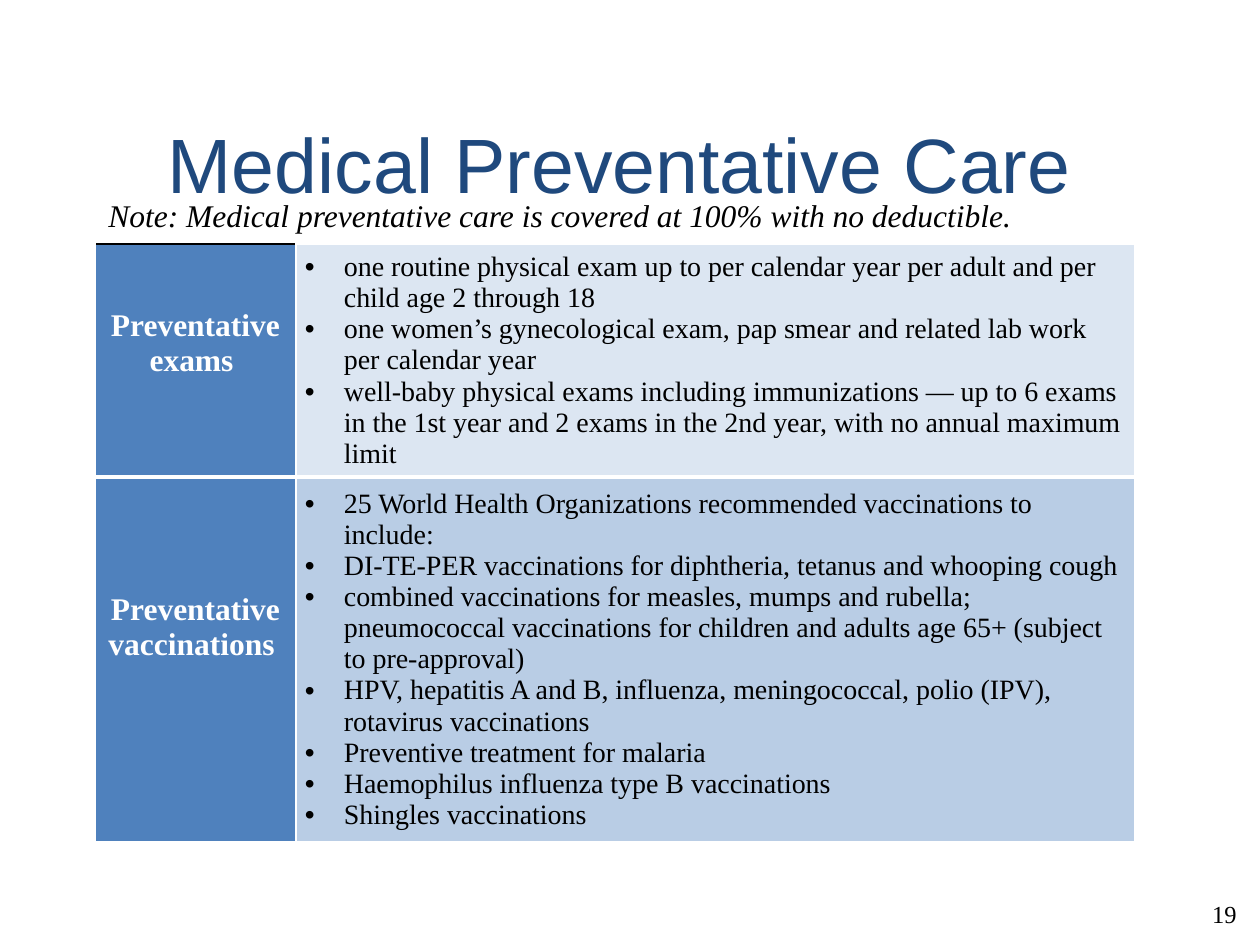
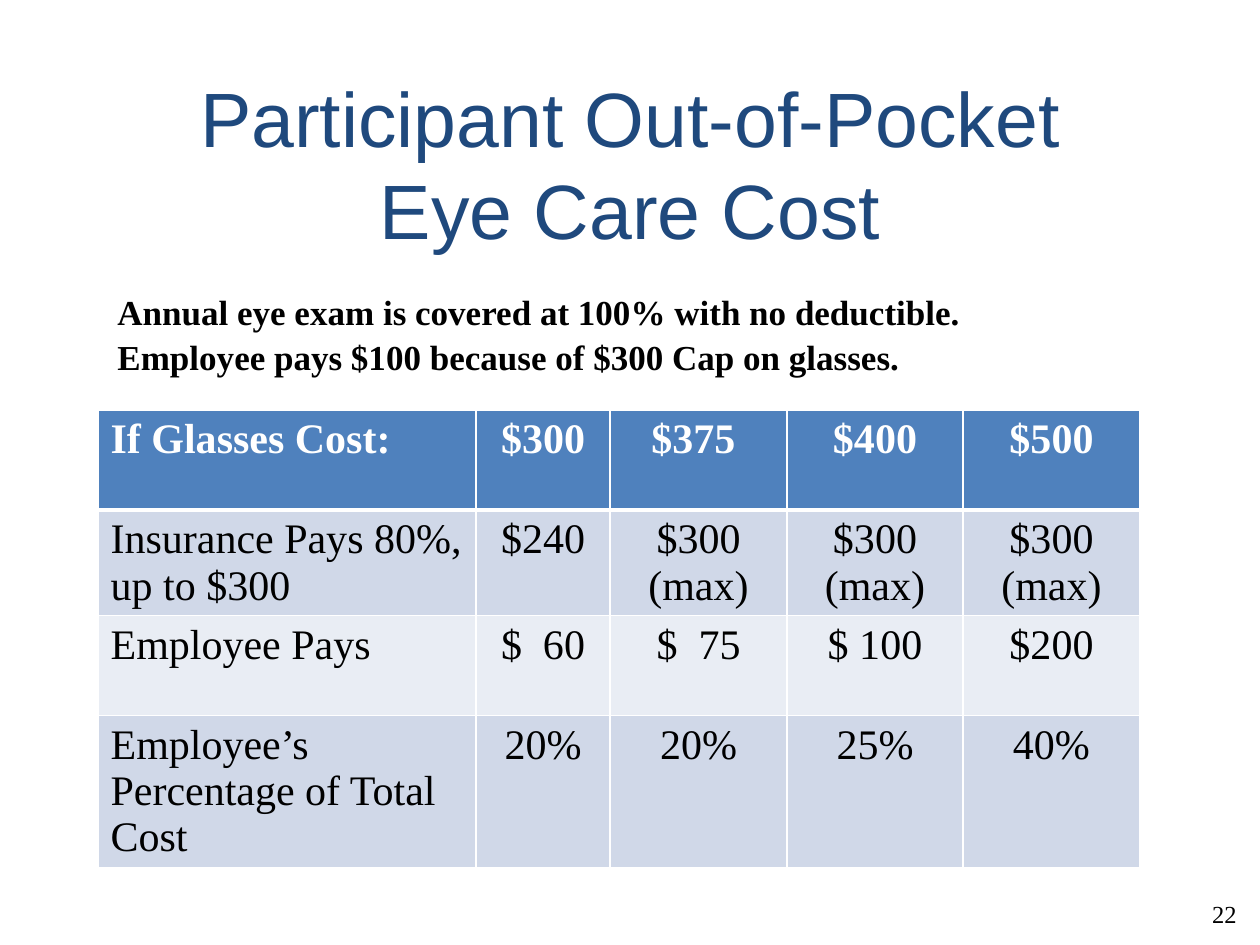
import pptx
import pptx.util
import pptx.dml.color
import pptx.enum.text
import pptx.oxml
import pptx.oxml.ns
from dataclasses import dataclass
from lxml import etree


@dataclass(frozen=True)
class Theme:
    sans: str = "Arial"
    serif: str = "Times New Roman"
    navy: str = "1F497D"
    blue: str = "4F81BD"
    white: str = "FFFFFF"
    black: str = "000000"
    exam_tint: str = "DCE6F2"
    vaccine_tint: str = "B9CDE5"
    bands: tuple = ("D0D8E8", "E9EDF4")
    title_size: int = 44
    cost_size: int = 24
    lead_size: int = 20
    label_size: int = 18
    bullet_size: int = 16
    number_size: int = 14


theme = Theme()
PX = 914400 / 126
qn = pptx.oxml.ns.qn
ALIGN = pptx.enum.text.PP_ALIGN
ANCHOR = pptx.enum.text.MSO_ANCHOR


def format_text(tf, size, color, align=ALIGN.LEFT, font=theme.serif, bold=False, italic=False):
    for p in tf.paragraphs:
        p.alignment = align
        for r in p.runs:
            r.font.name = font
            r.font.size = pptx.util.Pt(size)
            r.font.bold = bold
            r.font.italic = italic
            r.font.color.rgb = pptx.dml.color.RGBColor.from_string(color)


def format_cell(cell, fill, top=theme.white, bottom_pt=1, top_pt=1):
    # Borders come before the fill in the cell properties
    tcPr = cell._tc.get_or_add_tcPr()
    edges = (("lnL", theme.white, 1), ("lnR", theme.white, 1),
             ("lnT", top, top_pt), ("lnB", theme.white, bottom_pt))
    for tag, color, width in edges:
        ln = etree.SubElement(tcPr, qn("a:" + tag), w=str(width * 12700))
        solid = etree.SubElement(ln, qn("a:solidFill"))
        etree.SubElement(solid, qn("a:srgbClr"), val=color)
    cell.fill.solid()
    cell.fill.fore_color.rgb = pptx.dml.color.RGBColor.from_string(fill)


prs = pptx.Presentation()
prs.slide_width = pptx.util.Inches(10)
prs.slide_height = pptx.util.Inches(7.5)

# Shared parts: title, note above the table, table frame, slide number
pages = [
    {"title": "Medical Preventative Care ", "number": "19",
     "note": ["Note: Medical preventative care is covered at 100% with no deductible."],
     "note_box": (96, 190, 1050, 50), "note_size": theme.label_size, "italic": True,
     "table_at": (95, 244), "cols": [201, 839], "rows": [233, 365]},
    {"title": "Participant Out-of-Pocket\vEye Care Cost", "number": "22",
     "note": ["Annual eye exam is covered at 100% with no deductible.",
              "Employee pays $100 because of $300 Cap on glasses."],
     "note_box": (105, 284, 1029, 97), "note_size": theme.lead_size, "italic": False,
     "table_at": (98, 410), "cols": [378, 134, 177, 176, 177], "rows": [100] * 4},
]
tables = []
for page in pages:
    s = prs.slides.add_slide(prs.slide_layouts[5])
    sp = s.shapes.title
    sp.left, sp.top, sp.width, sp.height = (int(v * PX) for v in (95, 84, 1071, 158))
    tf = sp.text_frame
    tf.text = page["title"]
    tf.auto_size = pptx.enum.text.MSO_AUTO_SIZE.NONE
    tf.vertical_anchor = ANCHOR.MIDDLE
    format_text(tf, theme.title_size, theme.navy, ALIGN.CENTER, theme.sans)

    cols, rows = page["cols"], page["rows"]
    box = (*page["table_at"], sum(cols), sum(rows))
    table = s.shapes.add_table(len(rows), len(cols), *(int(v * PX) for v in box)).table
    table.first_row = table.horz_banding = False
    for column, width in zip(table.columns, cols):
        column.width = int(width * PX)
    for row, height in zip(table.rows, rows):
        row.height = int(height * PX)
    tables.append(table)

    tf = s.shapes.add_textbox(*(int(v * PX) for v in page["note_box"])).text_frame
    tf.word_wrap = True
    tf.text = "\n".join(page["note"])
    for p in tf.paragraphs[1:]:
        p.space_before = pptx.util.Pt(2)
    format_text(tf, page["note_size"], theme.black,
                bold=not page["italic"], italic=page["italic"])

    tf = s.shapes.add_textbox(*(int(v * PX) for v in (1194, 893, 55, 42))).text_frame
    tf.word_wrap = False
    tf.vertical_anchor = ANCHOR.MIDDLE
    tf.text = page["number"]
    format_text(tf, theme.number_size, theme.black, ALIGN.RIGHT)

care_table, cost_table = tables

# Preventative care: label, space under the label, tint, bullets
care = [
    ("Preventative exams ", 35, theme.exam_tint, [
        "one routine physical exam up to per calendar year per adult and per child age 2 through 18",
        "one women’s gynecological exam, pap smear and related lab work per calendar year",
        "well-baby physical exams including immunizations — up to 6 exams in the 1st year "
        "and 2 exams in the 2nd year, with no annual maximum limit"]),
    ("Preventative vaccinations ", 64, theme.vaccine_tint, [
        "25 World Health Organizations recommended vaccinations to include:",
        "DI-TE-PER vaccinations for diphtheria, tetanus and whooping cough",
        "combined vaccinations for measles, mumps and rubella; pneumococcal vaccinations "
        "for children and adults age 65+ (subject to pre-approval)",
        "HPV, hepatitis A and B, influenza, meningococcal, polio (IPV), rotavirus vaccinations",
        "Preventive treatment for malaria",
        "Haemophilus influenza type B vaccinations",
        "Shingles vaccinations"]),
]
for i, (label, gap, tint, bullets) in enumerate(care):
    label_cell, list_cell = care_table.cell(i, 0), care_table.cell(i, 1)
    edge = 3 if i == 0 else 1
    format_cell(label_cell, theme.blue, theme.white if i else theme.black, edge, 1 if i else 1)
    format_cell(list_cell, tint, bottom_pt=edge)
    for cell in (label_cell, list_cell):
        cell.vertical_anchor = ANCHOR.MIDDLE
        cell.margin_left = cell.margin_right = int(9 * PX)
        cell.margin_top = cell.margin_bottom = 0
    label_cell.margin_bottom = int(gap * PX)
    label_cell.text_frame.text = label
    format_text(label_cell.text_frame, theme.label_size, theme.white, ALIGN.CENTER, bold=True)

    tf = list_cell.text_frame
    tf.text = "\n".join(bullets)
    for p in tf.paragraphs:
        pPr = p._p.get_or_add_pPr()
        pPr.set("marL", str(int(39 * PX)))
        pPr.set("indent", str(int(-39 * PX)))
        etree.SubElement(pPr, qn("a:buFont"), typeface=theme.sans)
        etree.SubElement(pPr, qn("a:buChar"), char="•")
    format_text(tf, theme.bullet_size, theme.black)

# Eye care costs: header row, then banded rows
costs = [
    ["If Glasses Cost:", "$300", "$375 ", "$400", "$500"],
    ["Insurance Pays 80%,\nup to $300", "$240"] + ["$300 (max)"] * 3,
    ["Employee Pays", "$  60", "$  75", "$ 100", "$200"],
    ["Employee’s Percentage of Total Cost", "20%", "20%", "25%", "40%"],
]
for i, values in enumerate(costs):
    header = i == 0
    for j, value in enumerate(values):
        cell = cost_table.cell(i, j)
        format_cell(cell, theme.blue if header else theme.bands[(i - 1) % 2],
                    bottom_pt=3 if header else 1, top_pt=3 if i == 1 else 1)
        cell.text_frame.text = value
        format_text(cell.text_frame, theme.cost_size, theme.white if header else theme.black,
                    ALIGN.CENTER if j else ALIGN.LEFT, bold=header)

prs.save("out.pptx")
